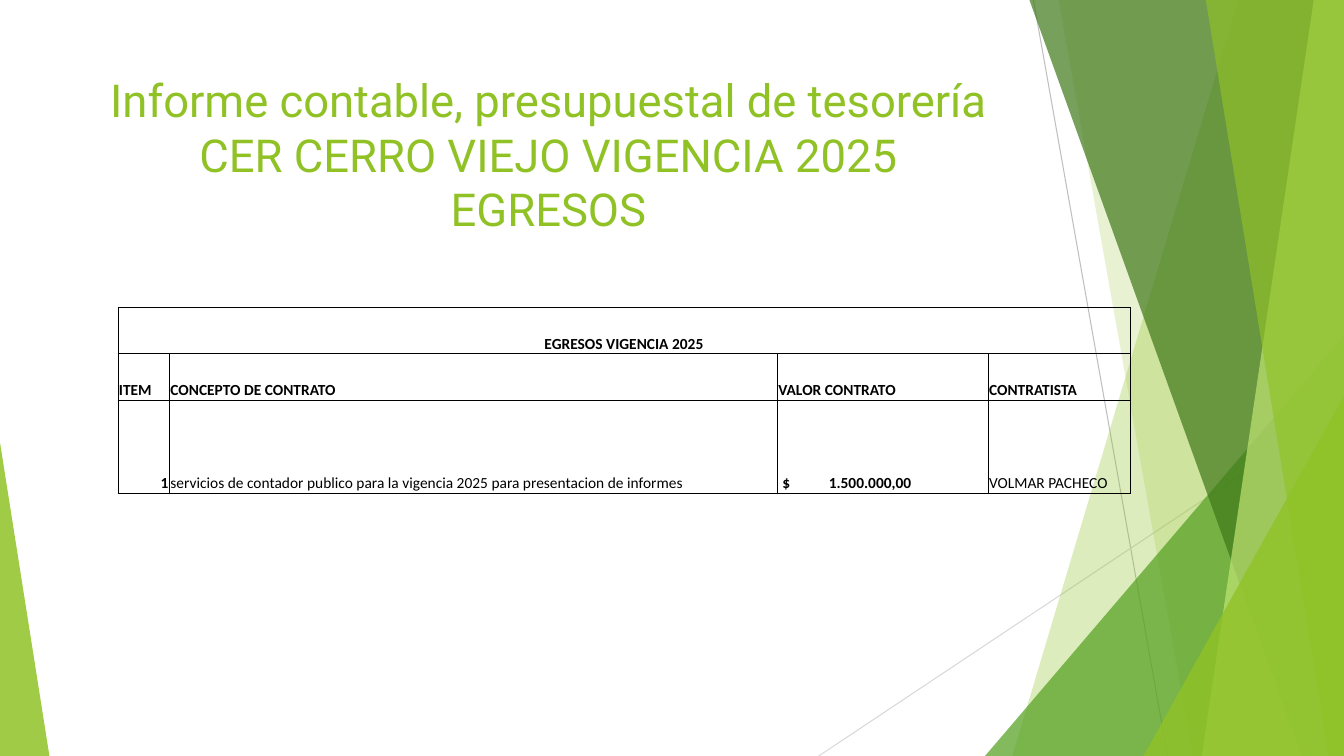
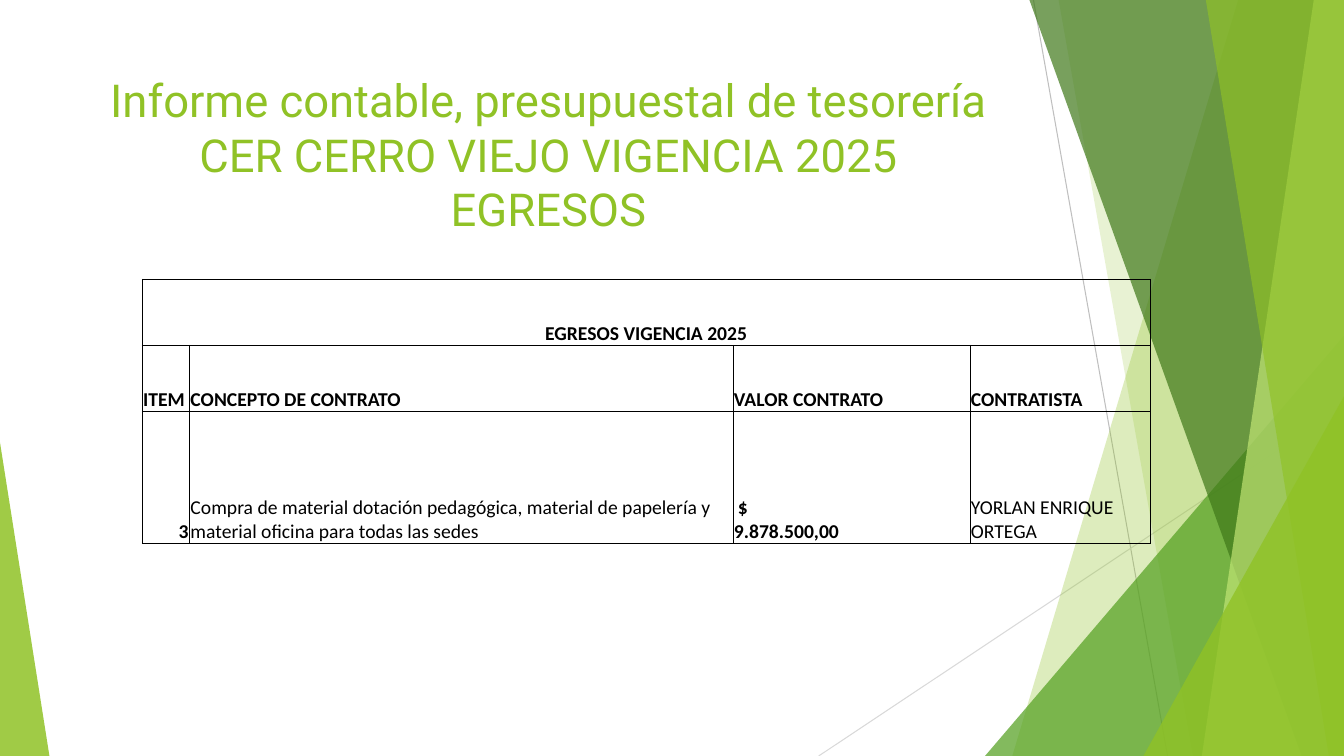
from lxml.etree import SubElement
from pptx import Presentation
from pptx.dml.color import RGBColor
from pptx.enum.shapes import MSO_CONNECTOR, MSO_SHAPE
from pptx.enum.text import MSO_ANCHOR, PP_ALIGN
from pptx.oxml.ns import qn
from pptx.util import Inches, Pt

LIME = RGBColor(0x90, 0xC2, 0x26)
GREEN = RGBColor(0x54, 0xA0, 0x21)
FOREST = RGBColor(0x3F, 0x78, 0x19)
PALE_LIME = RGBColor(0xC0, 0xE4, 0x74)
GRAY = RGBColor(0xBF, 0xBF, 0xBF)
LIGHT_GRAY = RGBColor(0xD9, 0xD9, 0xD9)
BLACK = RGBColor(0, 0, 0)

TITLE_FONT = "Roboto"
TABLE_FONT = "Calibri"
TITLE = "Informe contable, presupuestal de tesorería CER CERRO VIEJO VIGENCIA 2025\vEGRESOS"
TABLE_TITLE = "EGRESOS VIGENCIA 2025"
HEADINGS = ["ITEM", "CONCEPTO DE CONTRATO", "VALOR CONTRATO", "CONTRATISTA"]

PAGE_WIDTH, PAGE_HEIGHT = 13.33, 7.5
FACETS_BOX = (8.12, 0, 5.21, PAGE_HEIGHT)
WEDGE_BOX = (0, 4.39, 0.49, 3.11)
TITLE_BOX = (0.74, 0.67, 9.4, 1.44)

FACETS = [
    ("strip", 4.16, 1.92, LIME, 30),
    ("strip", 2.38, 3.71, LIME, 20),
    ("corner", 1.65, 3.33, GREEN, 72),
    ("strip", 2.09, 4.79, FOREST, 70),
    ("strip", 4.91, 3.8, PALE_LIME, 70),
    ("strip", 3.84, 5.06, LIME, 65),
    ("corner", 3.22, 3.93, LIME, 80),
]

REPORTS = [
    {
        "corner": (1.17, 3.05),
        "columns": [0.51, 6.03, 2.09, 1.41],
        "row_height": 0.46,
        "size": 11,
        "entry": [
            "1",
            "servicios de contador publico para la vigencia 2025 para presentacion de informes",
            "$\t1.500.000,00",
            "VOLMAR PACHECO",
        ],
    },
    {
        "corner": (1.41, 2.77),
        "columns": [0.47, 5.39, 2.35, 1.79],
        "row_height": 0.655,
        "size": 14,
        "entry": [
            "3",
            "Compra de material dotación pedagógica, material de papelería y material oficina para todas las sedes",
            "$\v9.878.500,00",
            "YORLAN ENRIQUE ORTEGA",
        ],
    },
]


def paint(shape, color, opacity):
    """Give a shape a translucent fill without line or shadow."""
    shape.shadow.inherit = False
    shape.line.fill.background()
    shape.fill.solid()
    shape.fill.fore_color.rgb = color
    tint = shape.fill._xPr.find(qn("a:solidFill"))[0]
    SubElement(tint, qn("a:alpha"), val=str(opacity * 1000))


def add_line(page, start, end, color):
    """Draw a thin straight line between two points."""
    ends = [Inches(value) for value in (*start, *end)]
    line = page.shapes.add_connector(MSO_CONNECTOR.STRAIGHT, *ends)
    line.line.color.rgb = color
    line.line.width = Pt(0.75)
    SubElement(line._element.spPr, qn("a:effectLst"))


def add_triangle(page, box, apex, color, opacity):
    """Draw a triangle whose apex sits at a fraction of its width."""
    triangle = page.shapes.add_shape(
        MSO_SHAPE.ISOSCELES_TRIANGLE, *[Inches(value) for value in box]
    )
    triangle.adjustments[0] = apex
    paint(triangle, color, opacity)


def add_strip(page, box, top_x, bottom_x, color, opacity):
    """Fill the box to the right of a slanted edge."""
    left, top, width, height = box
    right, bottom = left + width, top + height
    builder = page.shapes.build_freeform(Inches(left + top_x), Inches(top))
    corners = [(right, top), (right, bottom), (left + bottom_x, bottom)]
    builder.add_line_segments([(Inches(x), Inches(y)) for x, y in corners])
    paint(builder.convert_to_shape(), color, opacity)


def add_facets(page, box):
    """Draw the overlapping lines and green facets within a box."""
    left, top, width, height = box
    right, bottom = left + width, top + height
    add_line(page, (left + 2.13, top), (left + 3.46, bottom), GRAY)
    add_line(page, (right, top + 4.03), (left, bottom), LIGHT_GRAY)
    for kind, first, second, color, opacity in FACETS:
        if kind == "strip":
            add_strip(page, box, first, second, color, opacity)
        else:
            corner = (left + first, top + second, width - first, height - second)
            add_triangle(page, corner, 1, color, opacity)


def add_title(page, box):
    """Write the shared title in a box."""
    frame = page.shapes.add_textbox(*[Inches(value) for value in box]).text_frame
    frame.word_wrap = True
    para = frame.paragraphs[0]
    para.text = TITLE
    para.alignment = PP_ALIGN.CENTER
    para.font.name = TITLE_FONT
    para.font.size = Pt(32.4)
    para.font.color.rgb = LIME


def set_borders(cell):
    """Draw thin black borders around a cell."""
    properties = cell._tc.get_or_add_tcPr()
    for side in ("a:lnL", "a:lnR", "a:lnT", "a:lnB"):
        border = SubElement(properties, qn(side), w=str(Pt(0.5)))
        fill = SubElement(border, qn("a:solidFill"))
        SubElement(fill, qn("a:srgbClr"), val=str(BLACK))


def set_amount_layout(para, tab):
    """Indent the currency sign and right-align the amount at a tab."""
    properties = para._p.get_or_add_pPr()
    properties.set("marL", "0")
    properties.set("indent", str(Inches(0.04)))
    tabs = SubElement(properties, qn("a:tabLst"))
    SubElement(tabs, qn("a:tab"), pos=str(Inches(tab)), algn="r")


def fill_cell(cell, text, size, bold, alignment=PP_ALIGN.LEFT, tab=None):
    """Write and style one table cell."""
    set_borders(cell)
    cell.fill.background()
    cell.vertical_anchor = MSO_ANCHOR.BOTTOM
    cell.margin_left = cell.margin_right = cell.margin_top = Inches(0.01)
    cell.margin_bottom = 0
    para = cell.text_frame.paragraphs[0]
    para.text = text
    para.alignment = alignment
    if tab:
        set_amount_layout(para, tab)
    para.font.name = TABLE_FONT
    para.font.size = Pt(size)
    para.font.bold = bold
    para.font.color.rgb = BLACK


def add_expenses(page, corner, columns, row_height, size, entry):
    """Build the expenses table from its top left corner."""
    heights = [row_height, row_height, 2 * row_height]
    box = (*corner, sum(columns), sum(heights))
    table = page.shapes.add_table(
        len(heights), len(columns), *[Inches(value) for value in box]
    ).table
    table.first_row = table.horz_banding = False
    for column, width in zip(table.columns, columns):
        column.width = Inches(width)
    for row, height in zip(table.rows, heights):
        row.height = Inches(height)
    table.cell(0, 0).merge(table.cell(0, len(columns) - 1))
    for index in range(len(columns)):
        text = TABLE_TITLE if index == 0 else ""
        fill_cell(table.cell(0, index), text, size, True, PP_ALIGN.CENTER)
        fill_cell(table.cell(1, index), HEADINGS[index], size, True)
        fill_cell(
            table.cell(2, index),
            entry[index],
            size,
            bold=index in (0, 2),
            alignment=PP_ALIGN.RIGHT if index == 0 else PP_ALIGN.LEFT,
            tab=columns[index] - 0.09 if index == 2 else None,
        )


def add_report(deck, report):
    """Add one report slide with its decoration, title and table."""
    page = deck.slides.add_slide(deck.slide_layouts[6])
    add_facets(page, FACETS_BOX)
    add_triangle(page, WEDGE_BOX, 0, LIME, 85)
    add_title(page, TITLE_BOX)
    add_expenses(page, **report)


def main():
    """Build and save the deck."""
    deck = Presentation()
    deck.slide_width = Inches(PAGE_WIDTH)
    deck.slide_height = Inches(PAGE_HEIGHT)
    for report in REPORTS:
        add_report(deck, report)
    deck.save("out.pptx")


if __name__ == "__main__":
    main()
